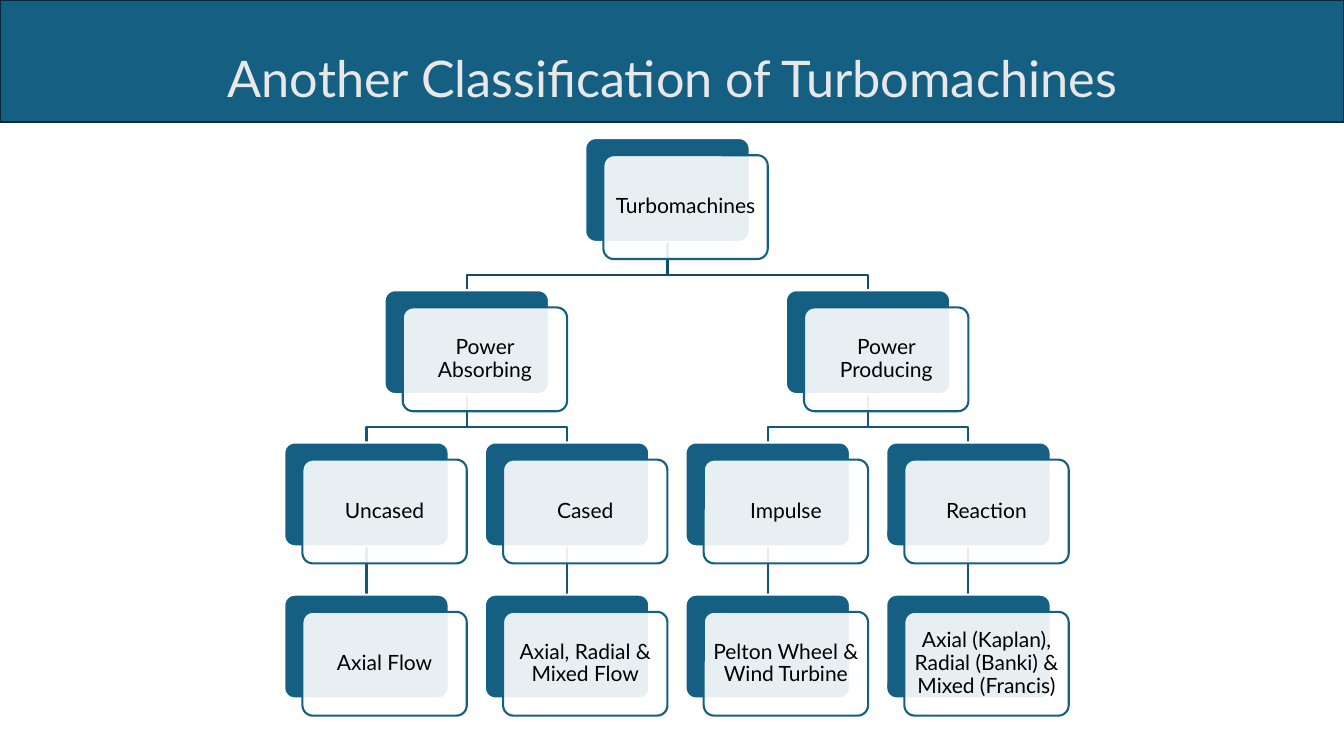
from dataclasses import dataclass

from lxml import etree
from pptx import Presentation
from pptx import util as u
from pptx.dml.color import RGBColor
from pptx.enum import shapes, text
from pptx.oxml.ns import qn


@dataclass(frozen=True)
class Theme:
    font: str = "Lato"
    title_size: float = 36
    box_size: float = 15
    line_width: float = 1.5
    blue: str = "156082"
    band_edge: str = "092A39"
    root_link: str = "114D68"
    link: str = "135776"
    title: str = "E8E8E8"
    ink: str = "000000"
    white: str = "FFFFFF"


THEME = Theme()

# Slide size and tree grid, in inches
WIDTH, HEIGHT = 13.33, 7.5
BAND_HEIGHT = 1.21
TREE_LEFT, TREE_TOP = 2.82, 1.37
COLUMN, ROW = 1.99, 1.51
BOX_WIDTH, BOX_HEIGHT = 1.63, 1.03
PANEL_SHIFT = (0.18, 0.17)
ELBOW_RISE = 0.15

# Each node: its text and its children
TREE = ("Turbomachines", [
    ("Power Absorbing", [
        ("Uncased", [("Axial Flow", [])]),
        ("Cased", [("Axial, Radial & Mixed Flow", [])]),
    ]),
    ("Power Producing", [
        ("Impulse", [("Pelton Wheel & Wind Turbine", [])]),
        ("Reaction", [("Axial (Kaplan), Radial (Banki) & Mixed (Francis)", [])]),
    ]),
])


@dataclass
class Node:
    label: str
    row: int
    column: float
    children: list

    @property
    def left(self):
        return TREE_LEFT + self.column * COLUMN

    @property
    def top(self):
        return TREE_TOP + self.row * ROW

    @property
    def center(self):
        return self.left + BOX_WIDTH / 2


def place(branch, leaf_columns, row=0):
    """Leaves take the next column; parents are centred over their children."""
    label, branches = branch
    children = [place(child, leaf_columns, row + 1) for child in branches]
    if children:
        column = (children[0].column + children[-1].column) / 2
    else:
        column = next(leaf_columns)
    return Node(label, row, column, children)


def walk(node):
    yield node
    for child in node.children:
        yield from walk(child)


def write(shape, words, *, size, color, inset=0.1):
    frame = shape.text_frame
    frame.word_wrap = True
    frame.auto_size = text.MSO_AUTO_SIZE.NONE
    frame.vertical_anchor = text.MSO_ANCHOR.MIDDLE
    frame.margin_left = frame.margin_right = u.Inches(inset)
    frame.margin_top = frame.margin_bottom = u.Inches(min(inset, 0.06))
    paragraph = frame.paragraphs[0]
    paragraph.alignment = text.PP_ALIGN.CENTER
    paragraph.line_spacing = 0.9
    run = paragraph.add_run()
    run.text = words
    run.font.name = THEME.font
    run.font.size = u.Pt(size)
    run.font.color.rgb = RGBColor.from_string(color)


def set_line(shape, color):
    shape.line.color.rgb = RGBColor.from_string(color)
    shape.line.width = u.Pt(THEME.line_width)


def add_block(slide, kind, left, top, width, height, *, fill, line, opacity=100):
    block = slide.shapes.add_shape(kind, *map(u.Inches, (left, top, width, height)))
    block.shadow.inherit = False
    block.fill.solid()
    block.fill.fore_color.rgb = RGBColor.from_string(fill)
    set_line(block, line)
    if opacity < 100:
        color = block.fill._xPr.find(qn("a:solidFill"))[0]
        etree.SubElement(color, qn("a:alpha"), val=str(opacity * 1000))
    return block


def add_header(slide, words):
    band = add_block(slide, shapes.MSO_SHAPE.RECTANGLE, 0, 0, WIDTH, BAND_HEIGHT,
                     fill=THEME.blue, line=THEME.band_edge)
    title = slide.shapes.title
    title.left, title.top = u.Inches(0.92), u.Inches(0.4)
    title.width, title.height = u.Inches(11.5), u.Inches(0.81)
    write(title, words, size=THEME.title_size, color=THEME.title)
    band._element.addnext(title._element)  # title above the band


def add_link(slide, parent, child):
    color = THEME.link if parent.row else THEME.root_link
    bottom = parent.top + BOX_HEIGHT
    if parent.column == child.column:
        ends = (parent.center, bottom, child.center, child.top)
        link = slide.shapes.add_connector(shapes.MSO_CONNECTOR.STRAIGHT,
                                          *map(u.Inches, ends))
        etree.SubElement(link._element.spPr, qn("a:effectLst"))
        set_line(link, color)
        return
    elbow = child.top - ELBOW_RISE
    points = [(parent.center, elbow), (child.center, elbow), (child.center, child.top)]
    builder = slide.shapes.build_freeform(u.Inches(parent.center), u.Inches(bottom))
    builder.add_line_segments([(u.Inches(x), u.Inches(y)) for x, y in points],
                              close=False)
    link = builder.convert_to_shape()
    link.shadow.inherit = False
    link.fill.background()
    set_line(link, color)


def add_box(slide, node):
    rounded = shapes.MSO_SHAPE.ROUNDED_RECTANGLE
    size = (BOX_WIDTH, BOX_HEIGHT)
    back = add_block(slide, rounded, node.left, node.top, *size,
                     fill=THEME.blue, line=THEME.white)
    panel = add_block(slide, rounded, node.left + PANEL_SHIFT[0],
                      node.top + PANEL_SHIFT[1], *size,
                      fill=THEME.white, line=THEME.blue, opacity=90)
    for block in (back, panel):
        block.adjustments[0] = 0.1
    write(panel, node.label, size=THEME.box_size, color=THEME.ink, inset=0.06)


def main():
    presentation = Presentation()
    presentation.slide_width = u.Inches(WIDTH)
    presentation.slide_height = u.Inches(HEIGHT)
    slide = presentation.slides.add_slide(presentation.slide_layouts[5])

    add_header(slide, "Another Classification of Turbomachines")

    # Links lie behind the boxes
    root = place(TREE, iter(range(4)))
    for node in walk(root):
        for child in node.children:
            add_link(slide, node, child)
    for node in walk(root):
        add_box(slide, node)

    presentation.save("out.pptx")


if __name__ == "__main__":
    main()
